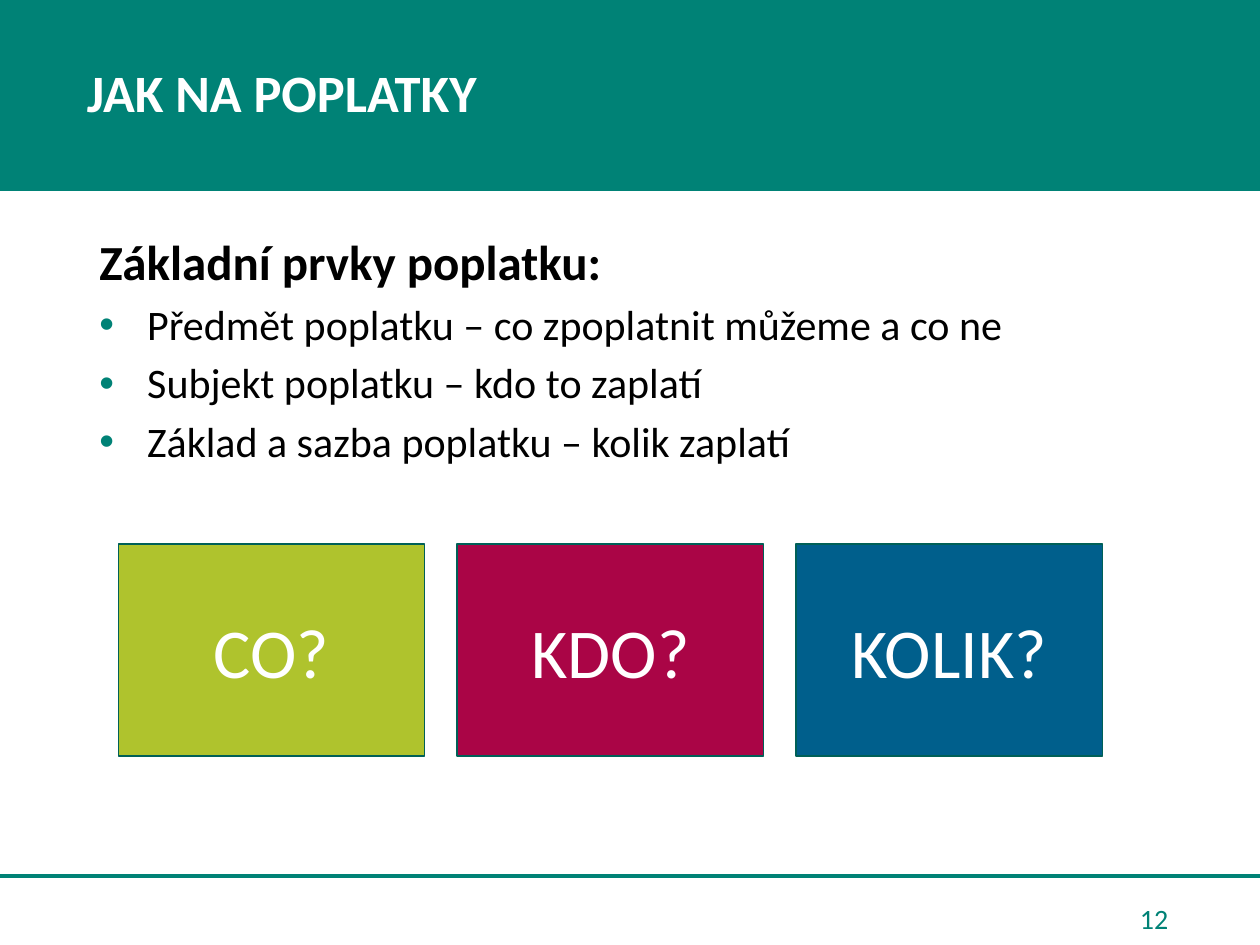
import dataclasses

import pptx
import pptx.dml.color
import pptx.enum.shapes
import pptx.enum.text
import pptx.oxml
import pptx.oxml.ns
import pptx.util
from lxml import etree

TEAL = pptx.dml.color.RGBColor(0x00, 0x82, 0x76)
DARK_TEAL = pptx.dml.color.RGBColor(0x00, 0x60, 0x57)
LIME = pptx.dml.color.RGBColor(0xAF, 0xC3, 0x2D)
CRIMSON = pptx.dml.color.RGBColor(0xAA, 0x05, 0x46)
BLUE = pptx.dml.color.RGBColor(0x00, 0x5F, 0x8C)
WHITE = pptx.dml.color.RGBColor(0xFF, 0xFF, 0xFF)
BLACK = pptx.dml.color.RGBColor(0x00, 0x00, 0x00)

CELL = pptx.util.Inches(0.1)
COLUMNS, ROWS = 100, 75
ALIGN = pptx.enum.text.PP_ALIGN
MIDDLE = pptx.enum.text.MSO_ANCHOR.MIDDLE


@dataclasses.dataclass
class Box:
    """Area of the slide in grid columns and rows."""
    left: float
    top: float
    width: float
    height: float

    def emu(self):
        """Return left, top, width and height as slide lengths."""
        return [round(n * CELL) for n in (self.left, self.top, self.width, self.height)]


def apply(target, values):
    """Set each named value on the target."""
    for name, value in values.items():
        setattr(target, name, value)


def write(paragraph, wording, size, color, bold=False, **layout):
    """Fill a paragraph with wording in the slide's font."""
    paragraph.text = wording
    apply(paragraph, layout)
    font = paragraph.runs[0].font
    apply(font, {"name": "Calibri", "size": pptx.util.Pt(size), "bold": bold})
    font.color.rgb = color


def add_text_frame(slide, box, **layout):
    """Add a wrapping text box and return its frame."""
    frame = slide.shapes.add_textbox(*box.emu()).text_frame
    apply(frame, {"word_wrap": True, **layout})
    return frame


def add_panel(slide, box, fill, outline):
    """Add a flat rectangle with a thin outline."""
    panel = slide.shapes.add_shape(pptx.enum.shapes.MSO_SHAPE.RECTANGLE, *box.emu())
    panel.shadow.inherit = False
    panel.fill.solid()
    panel.fill.fore_color.rgb = fill
    panel.line.color.rgb = outline
    panel.line.width = pptx.util.Pt(1)
    return panel


def add_bullet(paragraph, color):
    """Give a paragraph a coloured bullet and a hanging indent."""
    properties = paragraph._p.get_or_add_pPr()
    indent = pptx.util.Inches(0.38)
    properties.set("marL", str(indent))
    properties.set("indent", str(-indent))
    tint = etree.SubElement(properties, pptx.oxml.ns.qn("a:buClr"))
    etree.SubElement(tint, pptx.oxml.ns.qn("a:srgbClr"), val=str(color))
    etree.SubElement(properties, pptx.oxml.ns.qn("a:buFont"), typeface="Arial")
    etree.SubElement(properties, pptx.oxml.ns.qn("a:buChar"), char="•")


def build_header(slide, box, title):
    """Draw the title band."""
    add_panel(slide, box, TEAL, TEAL)
    frame = add_text_frame(slide, box, vertical_anchor=MIDDLE,
                           margin_left=pptx.util.Inches(0.69))
    write(frame.paragraphs[0], title, 30, WHITE, bold=True, line_spacing=0.9)


def build_elements(slide, box, heading, elements):
    """Write the heading and its bulleted elements."""
    frame = add_text_frame(slide, box)
    write(frame.paragraphs[0], heading, 28, BLACK, bold=True, line_spacing=0.9)
    for element in elements:
        paragraph = frame.add_paragraph()
        add_bullet(paragraph, TEAL)
        write(paragraph, element, 24, BLACK, line_spacing=0.9,
              space_before=pptx.util.Pt(7.5))


def build_questions(slide, box, questions, gap=2.6):
    """Draw equal question tiles across the box."""
    width = (box.width - gap * (len(questions) - 1)) / len(questions)
    for index, (question, color) in enumerate(questions):
        place = Box(box.left + index * (width + gap), box.top, width, box.height)
        frame = add_panel(slide, place, color, DARK_TEAL).text_frame
        apply(frame, {"word_wrap": True, "vertical_anchor": MIDDLE})
        write(frame.paragraphs[0], question, 40, WHITE, alignment=ALIGN.CENTER)


def build_footer(slide, box, number):
    """Draw the footer rule and the page number below it."""
    left, top, width, _ = box.emu()
    rule = slide.shapes.add_connector(
        pptx.enum.shapes.MSO_CONNECTOR.STRAIGHT, left, top, left + width, top)
    rule.line.color.rgb = TEAL
    rule.line.width = pptx.util.Pt(2.25)
    etree.SubElement(rule._element.spPr, pptx.oxml.ns.qn("a:effectLst"))
    place = Box(box.left + 71.1, box.top + 1.4, 22.9, 4)
    frame = add_text_frame(slide, place, vertical_anchor=MIDDLE)
    write(frame.paragraphs[0], number, 16, TEAL, alignment=ALIGN.RIGHT)


def main():
    """Build and save the slide."""
    deck = pptx.Presentation()
    apply(deck, {"slide_width": COLUMNS * CELL, "slide_height": ROWS * CELL})
    slide = deck.slides.add_slide(deck.slide_layouts[6])
    build_footer(slide, Box(-0.3, 69.5, 100.7, 5.5), "12")
    build_header(slide, Box(0, 0, 100.4, 15.1), "JAK NA POPLATKY")
    build_elements(slide, Box(6.9, 18.4, 86.9, 48.6), "Základní prvky poplatku:", [
        "Předmět poplatku – co zpoplatnit můžeme a co ne",
        "Subjekt poplatku – kdo to zaplatí",
        "Základ a sazba poplatku – kolik zaplatí",
    ])
    build_questions(slide, Box(9.4, 43.2, 78.1, 16.8),
                    [("CO?", LIME), ("KDO?", CRIMSON), ("KOLIK?", BLUE)])
    deck.save("out.pptx")


if __name__ == "__main__":
    main()
